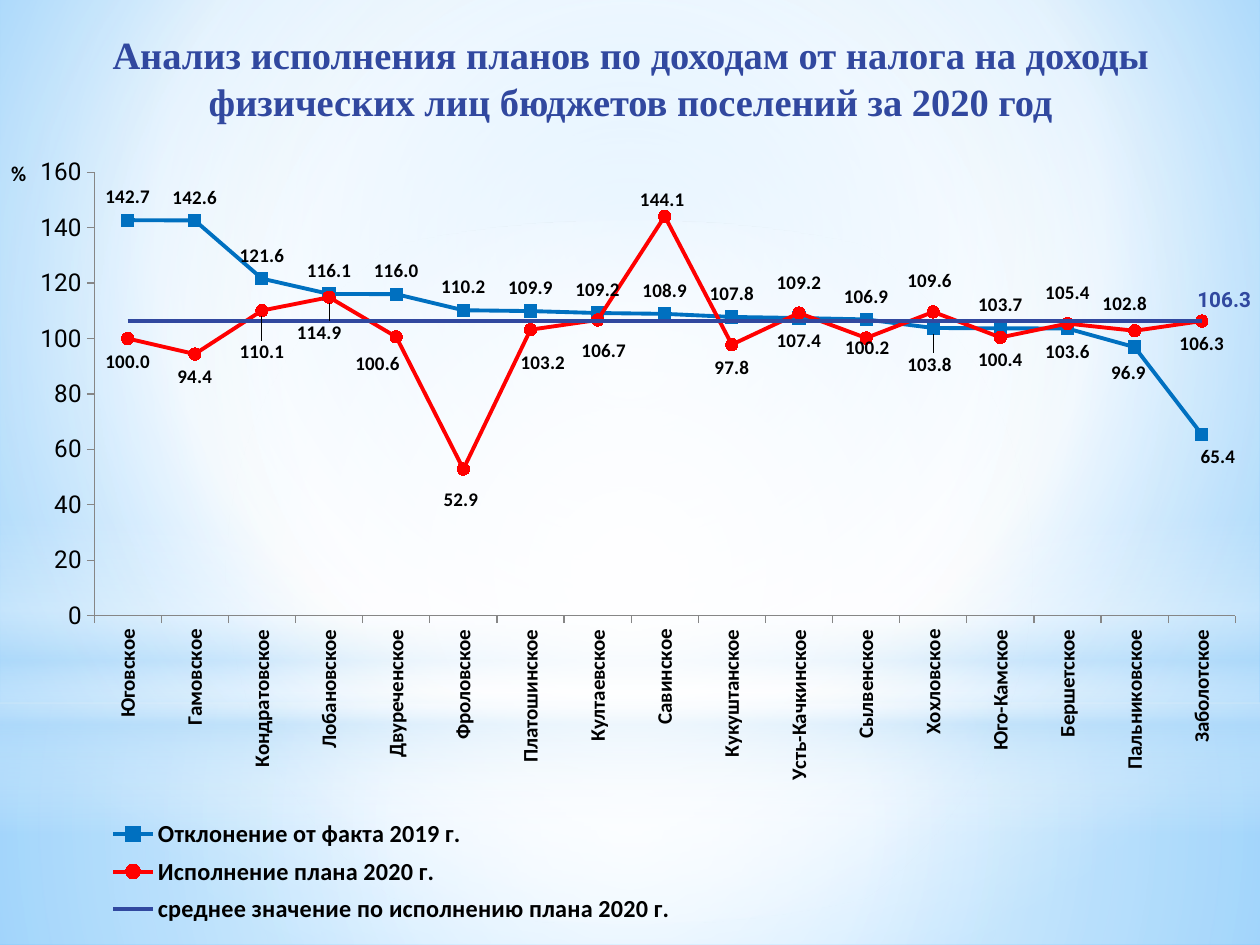
from pptx import Presentation
from pptx.chart.data import CategoryChartData
from pptx.dml.color import RGBColor
from pptx.enum.chart import XL_CHART_TYPE, XL_LABEL_POSITION as Pos, XL_LEGEND_POSITION, XL_MARKER_STYLE as Marker, XL_TICK_MARK
from pptx.enum.shapes import MSO_SHAPE as Shape
from pptx.enum.text import PP_ALIGN
from pptx.oxml import parse_xml
from pptx.oxml.ns import nsdecls, qn
from pptx.util import Inches, Pt


def rgb(color):
    return RGBColor.from_string(color)


def gradient(stops, direction):
    stop_xml = "".join(
        f'<a:gs pos="{pos * 1000}"><a:srgbClr val="{color}"><a:alpha val="{alpha * 1000}"/></a:srgbClr></a:gs>'
        for pos, color, alpha in stops)
    return parse_xml(f'<a:gradFill {nsdecls("a")} rotWithShape="1"><a:gsLst>{stop_xml}</a:gsLst>{direction}</a:gradFill>')


RADIAL = '<a:path path="circle"><a:fillToRect l="{}" t="{}" r="{}" b="{}"/></a:path>'
CENTER = RADIAL.format(50000, 50000, 50000, 50000)
VERTICAL = '<a:lin ang="5400000" scaled="0"/>'
WHITE, SKY, NAVY, BLUE, RED, BLACK, GRAY = "FFFFFF", "B4DCFA", "31489F", "0070C0", "FF0000", "000000", "868686"

prs = Presentation()
prs.slide_width, prs.slide_height = Inches(10), Inches(7.5)
slide = prs.slides.add_slide(prs.slide_layouts[6])

slide.background.fill.solid()
plain_fill = slide.element.find(".//" + qn("a:solidFill"))
plain_fill.getparent().replace(plain_fill, gradient(
    [(0, "9ED5FF", 100), (60, WHITE, 100), (100, "5BB9FF", 100)],
    RADIAL.format(20000, 10000, 20000, 60000)))

glows = [
    (Shape.RECTANGLE, 5.58, 1.92, [(0, WHITE, 91), (37, WHITE, 76), (100, SKY, 79)], CENTER),
    (Shape.RECTANGLE, 0, 5.58, [(0, WHITE, 89), (48, WHITE, 62), (100, SKY, 79)], CENTER),
    (Shape.RECTANGLE, 4.12, 2.5, [(0, WHITE, 0), (29, WHITE, 30), (45, SKY, 40), (55, WHITE, 26),
                                  (65, SKY, 60), (100, WHITE, 0)], VERTICAL),
    (Shape.OVAL, 1.75, 5.58, [(0, WHITE, 100), (56, WHITE, 0)], CENTER),
]
for outline, top, height, stops, direction in glows:
    glow = slide.shapes.add_shape(outline, 0, Inches(top), Inches(10), Inches(height))
    glow.shadow.inherit = False
    glow.line.fill.background()
    glow.fill.background()
    no_fill = glow.element.spPr.find(qn("a:noFill"))
    no_fill.getparent().replace(no_fill, gradient(stops, direction))

heading = slide.shapes.add_textbox(Inches(0.2), Inches(0.2), Inches(9.61), Inches(0.85)).text_frame
heading.word_wrap = True
heading.text = "Анализ исполнения планов по доходам от налога на доходы физических лиц бюджетов поселений за 2020 год"
title = heading.paragraphs[0]
title.alignment = PP_ALIGN.CENTER
title.font.name, title.font.size, title.font.bold = "Times New Roman", Pt(22), True
title.font.color.rgb = rgb(NAVY)

settlements = [
    "Юговское", "Гамовское", "Кондратовское", "Лобановское", "Двуреченское", "Фроловское",
    "Платошинское", "Култаевское", "Савинское", "Кукуштанское", "Усть-Качкинское", "Сылвенское",
    "Хохловское", "Юго-Камское", "Бершетское", "Пальниковское", "Заболотское"]
change = [142.7, 142.6, 121.6, 116.1, 116, 110.2, 109.9, 109.2, 108.9, 107.8, 107.4, 106.9,
          103.8, 103.7, 103.6, 96.9, 65.4]
execution = [100, 94.4, 110.1, 114.9, 100.6, 52.9, 103.2, 106.7, 144.1, 97.8, 109.2, 100.2,
             109.6, 100.4, 105.4, 102.8, 106.3]
data = CategoryChartData(number_format="#,##0.0")
data.categories = settlements
data.add_series("Отклонение от факта 2019 г.", change)
data.add_series("Исполнение плана 2020 г.", execution)
data.add_series("среднее значение по исполнению плана 2020 г.", [106.3] * len(settlements))

chart = slide.shapes.add_chart(XL_CHART_TYPE.LINE_MARKERS, Inches(-0.04), Inches(0.69),
                               Inches(9.97), Inches(6.77), data).chart
chart.has_title = False
chart.font.name, chart.font.size = "Roboto", Pt(18)
chart.font.color.rgb = rgb(BLACK)

values, names = chart.value_axis, chart.category_axis
values.minimum_scale, values.maximum_scale, values.major_unit = 0, 160, 20
values.has_major_gridlines = False
values.tick_labels.font.size = Pt(14)
values.tick_labels.number_format = "#,##0"
values.tick_labels.number_format_is_linked = False
names.tick_labels.font.size = Pt(12)
names.tick_labels.font.bold = True
names.tick_labels.font.name = "Calibri"
names_body = names._element.find(".//" + qn("a:bodyPr"))
names_body.set("rot", "-5400000")
names_body.set("vert", "horz")
for axis in (values, names):
    axis.major_tick_mark = XL_TICK_MARK.OUTSIDE
    axis.format.line.color.rgb = rgb(GRAY)
    axis.format.line.width = Pt(0.75)

unit = values.axis_title
unit.text_frame.text = "%"
unit_font = unit.text_frame.paragraphs[0].font
unit_font.name, unit_font.size, unit_font.bold = "Calibri", Pt(12), True
unit._element.find(".//" + qn("a:bodyPr")).set("rot", "0")

chart.has_legend = True
legend = chart.legend
legend.position = XL_LEGEND_POSITION.BOTTOM
legend.include_in_layout = False
legend.font.name, legend.font.size, legend.font.bold = "Calibri", Pt(14), True

placements = [
    (chart._chartSpace.chart.plotArea, 0, 0.08, 0.1, 0.92, 0.52),
    (legend._element, 1, 0.07, 0.85, 0.5, 0.14),
    (unit._element, 1, 0.01, 0.08, 0.02, 0.03),
]
for part, index, x, y, w, h in placements:
    for automatic in part.findall(qn("c:layout")):
        part.remove(automatic)
    part.insert(index, parse_xml(
        f'<c:layout {nsdecls("c")}><c:manualLayout><c:layoutTarget val="inner"/>'
        f'<c:xMode val="edge"/><c:yMode val="edge"/><c:x val="{x}"/><c:y val="{y}"/>'
        f'<c:w val="{w}"/><c:h val="{h}"/></c:manualLayout></c:layout>'))

above, below = Pos.ABOVE, Pos.BELOW
styles = [
    (BLUE, Marker.SQUARE, above, "Calibri", 11, BLACK, {
        10: (below, 0, 0), 12: (below, -0.03, 0.11), 14: (below, 0, 0),
        15: (below, -0.05, 0.02), 16: (below, 0.13, 0)}),
    (RED, Marker.CIRCLE, below, "Calibri", 11, BLACK, {
        2: (below, 0, 0.15), 3: (below, -0.08, 0.1), 4: (below, -0.15, 0.03),
        5: (below, -0.02, 0.06), 6: (below, 0.1, 0.08), 7: (below, 0.05, 0.06),
        8: (above, -0.02, 0.05), 10: (above, 0, -0.06), 11: (below, 0.01, -0.1),
        12: (above, -0.03, -0.06), 14: (above, 0, -0.06), 15: (above, -0.08, -0.03)}),
    (NAVY, Marker.NONE, None, "Roboto", 12, NAVY, {16: (above, 0.18, -0.03)}),
]
for series, (color, marker, side, font_name, size, text_color, moved) in zip(chart.plots[0].series, styles):
    series.smooth = False
    series.format.line.color.rgb = rgb(color)
    series.format.line.width = Pt(2.25)
    series.marker.style = marker
    if side is not None:
        series.marker.size = 7
        series.marker.format.fill.solid()
        series.marker.format.fill.fore_color.rgb = rgb(color)
        series.marker.format.line.color.rgb = rgb(color)
    labels = series.data_labels
    labels.show_value = side is not None
    labels.number_format = "#,##0.0"
    labels.number_format_is_linked = False
    if side is not None:
        labels.position = side
    fonts = [labels.font]
    for number, (position, dx, dy) in moved.items():
        label = series.points[number].data_label
        label.position = position
        fonts.append(label.font)
        entry = labels._element.findall(qn("c:dLbl"))[-1]
        entry.insert(1, parse_xml(f'<c:numFmt {nsdecls("c")} formatCode="#,##0.0" sourceLinked="0"/>'))
        entry.insert(1, parse_xml(
            f'<c:layout {nsdecls("c")}><c:manualLayout><c:x val="{Inches(dx) / Inches(9.97):.4f}"/>'
            f'<c:y val="{Inches(dy) / Inches(6.77):.4f}"/></c:manualLayout></c:layout>'))
    for font in fonts:
        font.name, font.size, font.bold = font_name, Pt(size), True
        font.color.rgb = rgb(text_color)

prs.save("out.pptx")
